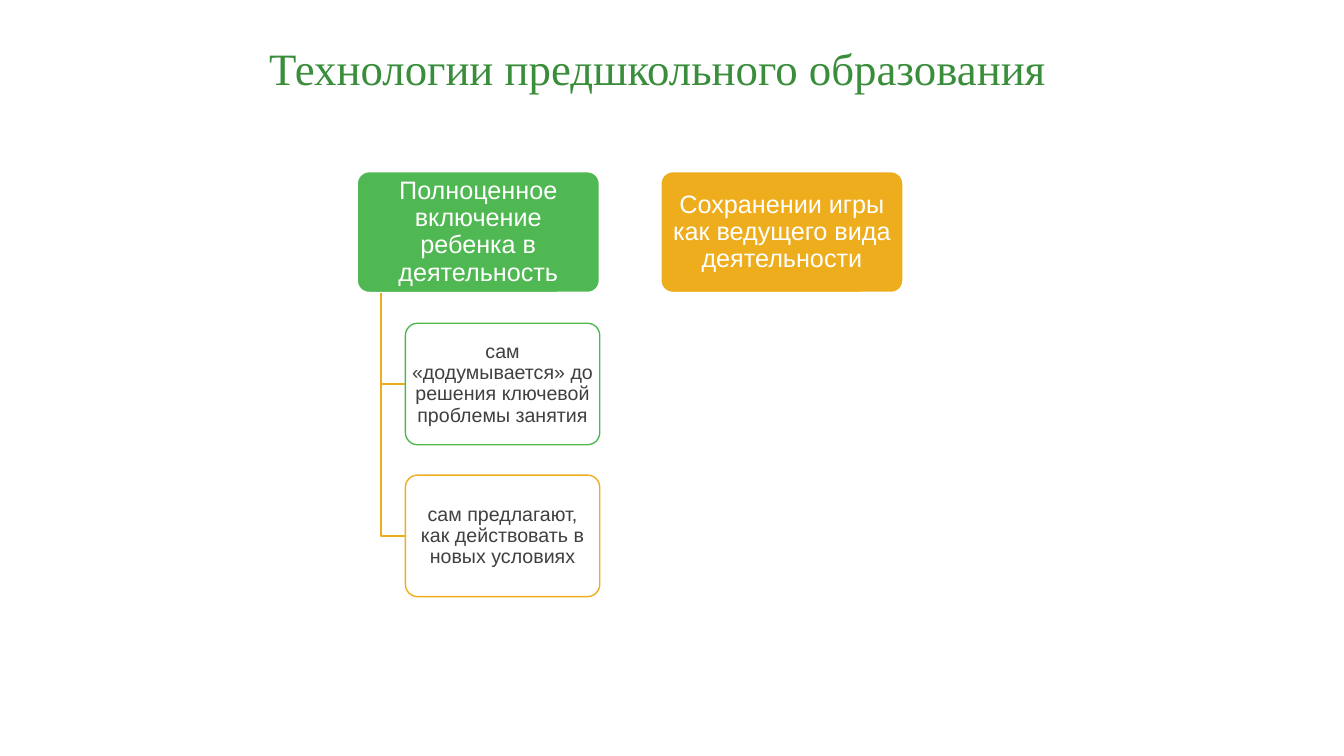
"""Build the slide on technologies of preschool education."""
from dataclasses import dataclass

from lxml import etree
from pptx import Presentation
from pptx.dml.color import RGBColor
from pptx.enum import shapes, text
from pptx.oxml import ns
from pptx.util import Pt

GREEN = RGBColor(0x50, 0xB8, 0x52)
AMBER = RGBColor(0xEE, 0xAD, 0x1D)
TITLE_GREEN = RGBColor(0x39, 0x8D, 0x3B)
DARK = RGBColor(0x40, 0x40, 0x40)
WHITE = RGBColor(0xFF, 0xFF, 0xFF)

BOX_W, BOX_H = 173.5, 86.8
TOP, LEFT = 122.4, 254.9
COLUMN_STEP, ROW_STEP = 1.25 * BOX_W, 1.25 * BOX_H
INDENT = BOX_W / 10
CHILD_W = 0.8 * BOX_W


@dataclass
class Child:
    """A white box hanging under a column head."""
    label: str
    colour: RGBColor


@dataclass
class Column:
    """A coloured head with its children."""
    label: str
    colour: RGBColor
    children: tuple[Child, ...] = ()


COLUMNS = (
    Column("Полноценное включение ребенка в деятельность", GREEN, (
        Child("сам «додумывается» до решения ключевой проблемы занятия", GREEN),
        Child("сам предлагают, как действовать в новых условиях", AMBER),
    )),
    Column("Сохранении игры как ведущего вида деятельности", AMBER),
)


def write(s, label: str, *, size: float, colour: RGBColor, font: str = "Arial",
          anchor=text.MSO_ANCHOR.MIDDLE, inset: tuple[float, float] = (7.2, 3.6)) -> None:
    """Write one centred paragraph into a shape."""
    tf = s.text_frame
    tf.word_wrap = True
    tf.vertical_anchor = anchor
    tf.margin_left = tf.margin_right = Pt(inset[0])
    tf.margin_top = tf.margin_bottom = Pt(inset[1])
    p = tf.paragraphs[0]
    p.alignment = text.PP_ALIGN.CENTER
    p.line_spacing = 0.9
    r = p.add_run()
    r.text = label
    r.font.name, r.font.size, r.font.color.rgb = font, Pt(size), colour


def add_box(sp, x: float, y: float, w: float, *, fill: RGBColor, line: RGBColor,
            weight: float):
    """Add a rounded box."""
    s = sp.add_shape(shapes.MSO_SHAPE.ROUNDED_RECTANGLE, Pt(x), Pt(y), Pt(w), Pt(BOX_H))
    s.adjustments[0] = 0.1
    s.shadow.inherit = False
    s.fill.solid()
    s.fill.fore_color.rgb = fill
    s.line.color.rgb, s.line.width = line, Pt(weight)
    return s


def add_elbow(sp, x: float, y: float, end_y: float) -> None:
    """Draw a line down from a head and across to a child."""
    builder = sp.build_freeform(Pt(x), Pt(y))
    builder.add_line_segments(
        [(Pt(x), Pt(end_y)), (Pt(x + INDENT), Pt(end_y))], close=False)
    s = builder.convert_to_shape()
    s.shadow.inherit = False
    s.fill.background()
    s.line.color.rgb, s.line.width = AMBER, Pt(1)


def add_child(sp, child: Child, x: float, y: float) -> None:
    """Add a slightly transparent white box with its text."""
    s = add_box(sp, x, y, CHILD_W, fill=WHITE, line=child.colour, weight=1)
    colour = s.fill._xPr.find(".//" + ns.qn("a:srgbClr"))
    etree.SubElement(colour, ns.qn("a:alpha"), val="90000")
    write(s, child.label, size=14, colour=DARK, inset=(2.1, 1.4))


def add_column(sp, column: Column, x: float) -> None:
    """Add a head, its connecting lines and its children."""
    s = add_box(sp, x, TOP, BOX_W, fill=column.colour, line=WHITE, weight=1.5)
    write(s, column.label, size=18, colour=WHITE, inset=(2.7, 1.8))
    for row, child in enumerate(column.children, 1):
        y = TOP + row * ROW_STEP
        add_elbow(sp, x + INDENT, TOP + BOX_H, y + BOX_H / 2)
        add_child(sp, child, x + 2 * INDENT, y)


def main() -> None:
    """Create and save the presentation."""
    prs = Presentation()
    prs.slide_width, prs.slide_height = Pt(960), Pt(540)
    sp = prs.slides.add_slide(prs.slide_layouts[6]).shapes
    title = sp.add_textbox(Pt(82.8), Pt(-13.7), Pt(774), Pt(85))
    write(title, "Технологии предшкольного образования", size=32, colour=TITLE_GREEN,
          font="Times New Roman", anchor=text.MSO_ANCHOR.BOTTOM)
    for i, column in enumerate(COLUMNS):
        add_column(sp, column, LEFT + i * COLUMN_STEP)
    prs.save("out.pptx")


if __name__ == "__main__":
    main()
